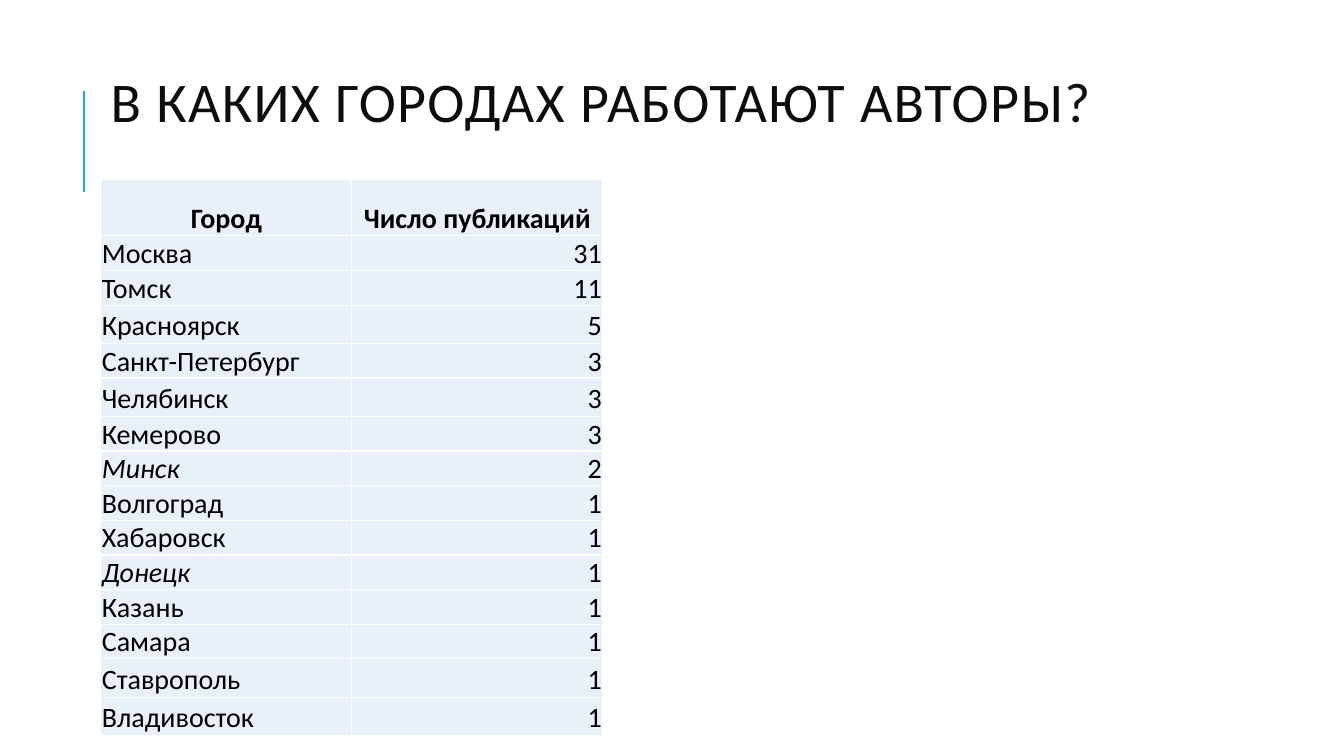
from dataclasses import dataclass

from lxml.etree import SubElement
from pptx import Presentation
from pptx.dml.color import RGBColor
from pptx.enum.shapes import MSO_CONNECTOR
from pptx.enum.text import MSO_ANCHOR, PP_ALIGN
from pptx.oxml.ns import qn
from pptx.slide import Slide
from pptx.table import _Cell
from pptx.text.text import _Paragraph
from pptx.util import Inches, Pt


@dataclass(frozen=True)
class Theme:
    font: str = "Calibri"
    title_size: int = 40
    table_size: int = 20
    accent_width: float = 1.5
    border_width: int = 1
    accent: str = "1CADE4"
    title: str = "0D0D0D"
    body: str = "000000"
    cell: str = "E8F1FA"
    border: str = "FFFFFF"


@dataclass(frozen=True)
class City:
    name: str
    publications: int
    height: float = 0.23
    italic: bool = False


THEME = Theme()
HEADER_HEIGHT = 0.56
COLUMN_WIDTH = 2.49
CITIES = [
    City("Москва", 31),
    City("Томск", 11),
    City("Красноярск", 5, height=0.38),
    City("Санкт-Петербург", 3, height=0.28),
    City("Челябинск", 3, height=0.38),
    City("Кемерово", 3),
    City("Минск", 2, italic=True),
    City("Волгоград", 1),
    City("Хабаровск", 1),
    City("Донецк", 1, italic=True),
    City("Казань", 1),
    City("Самара", 1),
    City("Ставрополь", 1, height=0.38),
    City("Владивосток", 1, height=0.38),
]


def apply_format(target: object, values: dict[str, object]) -> None:
    for name, value in values.items():
        setattr(target, name, value)


def write_text(para: _Paragraph, text: str, size: int, color: str,
               bold: bool = False, italic: bool = False) -> None:
    span = para.add_run()
    span.text = text
    apply_format(span.font, {"name": THEME.font, "size": Pt(size), "bold": bold, "italic": italic})
    span.font.color.rgb = RGBColor.from_string(color)


def draw_accent(page: Slide) -> None:
    accent = page.shapes.add_connector(
        MSO_CONNECTOR.STRAIGHT, Inches(0.83), Inches(1.9), Inches(0.83), Inches(0.9))
    accent.line.color.rgb = RGBColor.from_string(THEME.accent)
    accent.line.width = Pt(THEME.accent_width)
    SubElement(accent._element.spPr, qn("a:effectLst"))


def draw_title(page: Slide, text: str) -> None:
    box = page.shapes.add_textbox(Inches(1), Inches(0.24), Inches(10.63), Inches(1.64))
    apply_format(box.text_frame, {"word_wrap": True, "vertical_anchor": MSO_ANCHOR.MIDDLE})
    para = box.text_frame.paragraphs[0]
    para.line_spacing = 0.8
    write_text(para, text, THEME.title_size, THEME.title)
    para.runs[0].font._element.set("spc", "100")


def draw_borders(cell: _Cell) -> None:
    properties = cell._tc.get_or_add_tcPr()
    for position, side in enumerate(("lnL", "lnR", "lnT", "lnB")):
        line = SubElement(properties, qn(f"a:{side}"), w=str(Pt(THEME.border_width)))
        fill = SubElement(line, qn("a:solidFill"))
        SubElement(fill, qn("a:srgbClr"), val=THEME.border)
        properties.insert(position, line)


def fill_cell(cell: _Cell, text: str, align: PP_ALIGN,
              bold: bool = False, italic: bool = False) -> None:
    apply_format(cell, {
        "margin_left": Inches(0.01),
        "margin_right": Inches(0.01),
        "margin_top": Inches(0.01),
        "margin_bottom": 0,
        "vertical_anchor": MSO_ANCHOR.BOTTOM,
    })
    cell.fill.solid()
    cell.fill.fore_color.rgb = RGBColor.from_string(THEME.cell)
    draw_borders(cell)
    para = cell.text_frame.paragraphs[0]
    para.alignment = align
    write_text(para, text, THEME.table_size, THEME.body, bold, italic)


def draw_table(page: Slide, headings: list[str], cities: list[City]) -> None:
    heights = [HEADER_HEIGHT] + [city.height for city in cities]
    table = page.shapes.add_table(
        len(heights), len(headings), Inches(1), Inches(1.78),
        Inches(COLUMN_WIDTH * len(headings)), Inches(sum(heights))).table
    apply_format(table, {"first_row": False, "horz_banding": False})
    for row, height in zip(table.rows, heights):
        row.height = Inches(height)
    for index, heading in enumerate(headings):
        table.columns[index].width = Inches(COLUMN_WIDTH)
        fill_cell(table.cell(0, index), heading, PP_ALIGN.CENTER, bold=True)
    for index, city in enumerate(cities, start=1):
        fill_cell(table.cell(index, 0), city.name, PP_ALIGN.LEFT, italic=city.italic)
        fill_cell(table.cell(index, 1), str(city.publications), PP_ALIGN.RIGHT)


def main() -> None:
    deck = Presentation()
    apply_format(deck, {"slide_width": Inches(13.33), "slide_height": Inches(7.5)})
    page = deck.slides.add_slide(deck.slide_layouts[6])
    draw_accent(page)
    draw_title(page, "В КАКИХ ГОРОДАХ РАБОТАЮТ АВТОРЫ?")
    draw_table(page, ["Город", "Число публикаций"], CITIES)
    deck.save("out.pptx")


if __name__ == "__main__":
    main()
